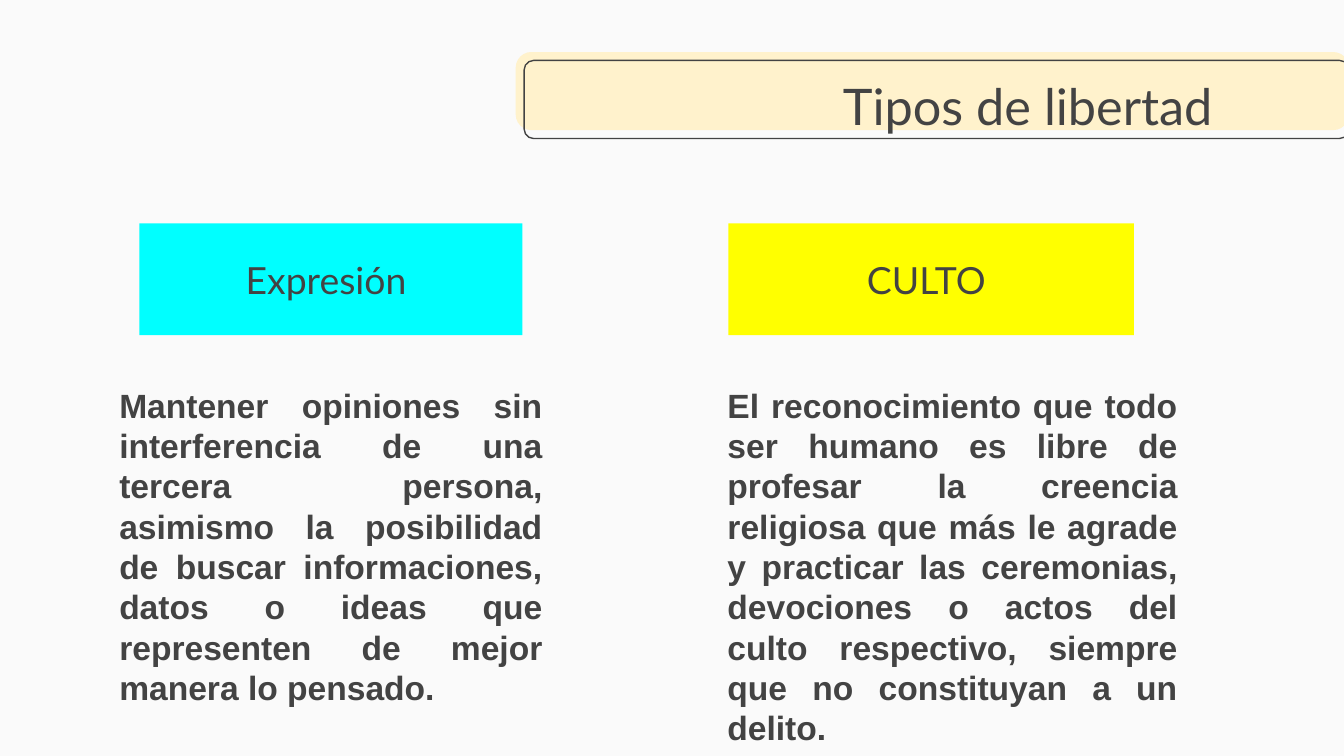
"""Build the slide that compares two kinds of freedom."""
from dataclasses import dataclass

import pptx
import pptx.dml.color
import pptx.enum.shapes
import pptx.enum.text
import pptx.oxml
import pptx.util

SCALE = 5715
ALIGN = pptx.enum.text.PP_ALIGN
ANCHOR = pptx.enum.text.MSO_ANCHOR


@dataclass(frozen=True)
class Theme:
    """Hold the colours, fonts and type sizes of the slide."""
    background: str = "FAFAFA"
    ink: str = "434343"
    cream: str = "FFF2CC"
    cyan: str = "00FFFF"
    yellow: str = "FFFF00"
    heading_font: str = "Lato"
    body_font: str = "Arial"
    title_size: int = 27
    heading_size: int = 20
    body_size: int = 18
    outline: float = 0.75


THEME = Theme()


def px(length):
    """Turn px into EMU."""
    return pptx.util.Emu(length * SCALE)


def color(value):
    """Turn a hex string into a colour."""
    return pptx.dml.color.RGBColor.from_string(value)


def paint(shape, value):
    """Fill a shape with one colour."""
    shape.fill.solid()
    shape.fill.fore_color.rgb = color(value)


def place(shape, box):
    """Move and size a shape to a box in px."""
    shape.left, shape.top, shape.width, shape.height = map(px, box)


def write(shape, text, size, font, align, anchor, bold=False):
    """Write one formatted paragraph without a bullet."""
    frame = shape.text_frame
    frame.text = text
    frame.word_wrap = True
    frame.auto_size = pptx.enum.text.MSO_AUTO_SIZE.NONE
    frame.vertical_anchor = anchor
    frame.margin_left = frame.margin_right = px(16)
    frame.margin_top = frame.margin_bottom = px(16)
    paragraph = frame.paragraphs[0]
    paragraph.alignment = align
    paragraph.line_spacing = 1.0
    paragraph.space_before = pptx.util.Pt(0)
    paragraph.font.name = font
    paragraph.font.size = pptx.util.Pt(size)
    paragraph.font.bold = bold
    paragraph.font.color.rgb = color(THEME.ink)
    properties = paragraph._p.get_or_add_pPr()
    properties.set("marL", "0")
    properties.set("indent", "0")
    bullet = pptx.oxml.parse_xml(
        '<a:buNone xmlns:a="http://schemas.openxmlformats.org/drawingml/2006/main"/>')
    properties.insert_element_before(bullet, "a:tabLst", "a:defRPr", "a:extLst")


def add_band(slide, box, rounding):
    """Add a rounded band behind the title and return it."""
    band = slide.shapes.add_shape(
        pptx.enum.shapes.MSO_SHAPE.ROUNDED_RECTANGLE, *map(px, box))
    band.adjustments[0] = rounding
    band.shadow.inherit = False
    slide.shapes.title._element.addprevious(band._element)
    return band


def add_title(slide, box, text):
    """Build the title over a cream band and an offset outline."""
    left, top, width, height = box
    cream = add_band(slide, (left, top, width, height), 0.2)
    paint(cream, THEME.cream)
    cream.line.fill.background()
    outline = add_band(slide, (left + 10, top + 10, width - 10, height), 0.12)
    outline.fill.background()
    outline.line.color.rgb = color(THEME.ink)
    outline.line.width = pptx.util.Pt(THEME.outline)
    title = slide.shapes.title
    place(title, (left + 368, top + 29, 483, height - 24))
    write(title, text, THEME.title_size, THEME.heading_font, ALIGN.CENTER, ANCHOR.MIDDLE)


def add_column(slide, box, heading_box, indexes, fill, heading_text, body_text):
    """Build a coloured heading with a justified text below it."""
    left, top, width, height = box
    offset, heading_width, heading_height = heading_box
    heading, body = (slide.placeholders[index] for index in indexes)
    place(heading, (left + offset, top, heading_width, heading_height))
    paint(heading, fill)
    write(heading, heading_text, THEME.heading_size, THEME.heading_font,
          ALIGN.CENTER, ANCHOR.MIDDLE)
    place(body, (left, top + 176, width, height - 176))
    write(body, body_text, THEME.body_size, THEME.body_font,
          ALIGN.JUSTIFY, ANCHOR.TOP, bold=True)


def main():
    """Build and save the presentation."""
    presentation = pptx.Presentation()
    presentation.slide_width, presentation.slide_height = px(1600), px(900)
    slide = presentation.slides.add_slide(
        presentation.slide_layouts.get_by_name("Comparison"))
    paint(slide.background, THEME.background)
    add_title(slide, (614, 62, 992, 93), "Tipos de libertad")
    add_column(
        slide, (126, 266, 536, 518), (40, 456, 133), (1, 2), THEME.cyan, "Expresión ",
        "Mantener opiniones sin interferencia de una tercera persona, asimismo la "
        "posibilidad de buscar informaciones, datos o ideas que representen de mejor "
        "manera lo pensado.")
    add_column(
        slide, (850, 266, 568, 533), (17, 483, 133), (3, 4), THEME.yellow, "CULTO ",
        "El reconocimiento que todo ser humano es libre de profesar la creencia "
        "religiosa que más le agrade y practicar las ceremonias, devociones o actos "
        "del culto respectivo, siempre que no constituyan a un delito.")
    presentation.save("out.pptx")


if __name__ == "__main__":
    main()
